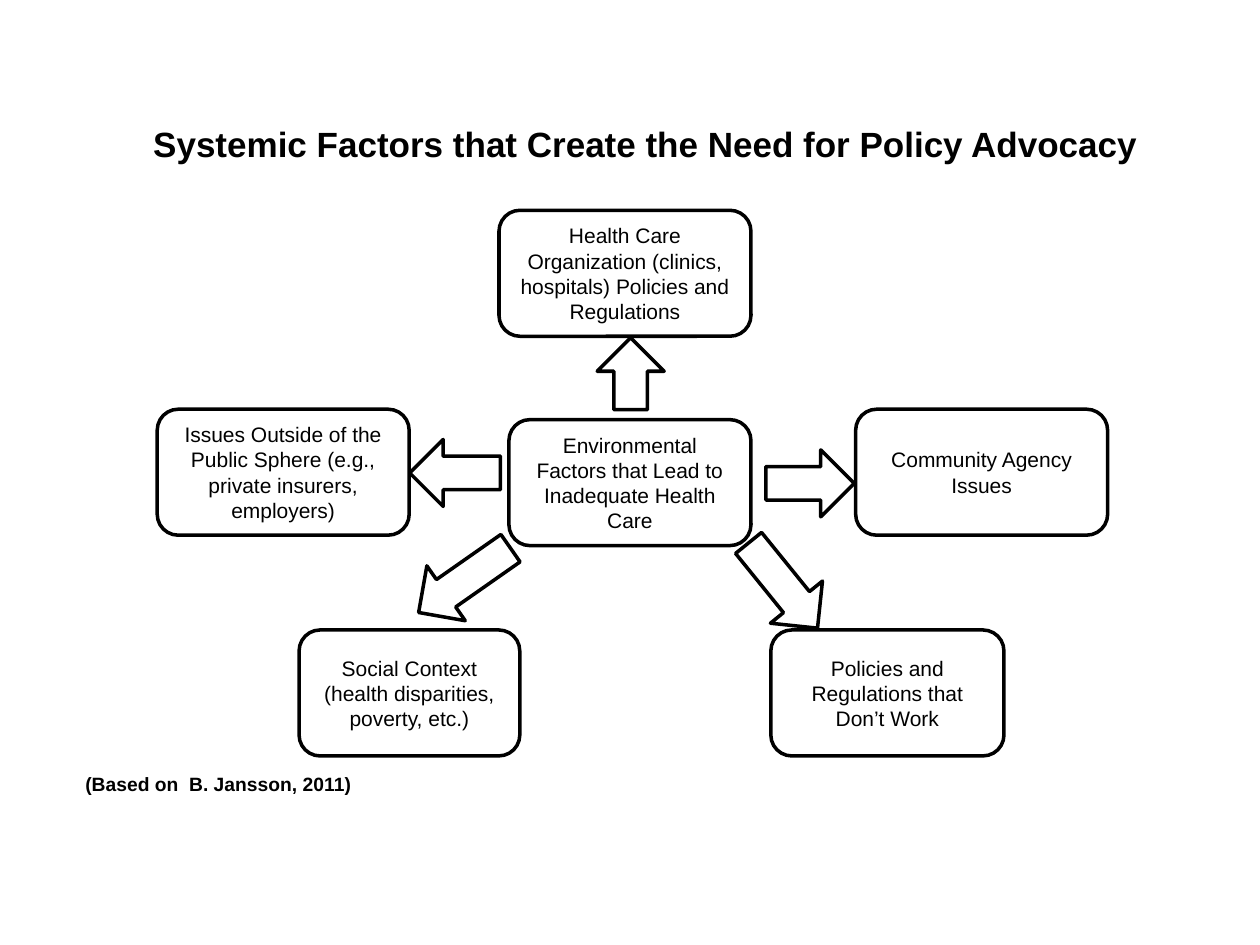
from pptx import Presentation
from pptx.dml.color import RGBColor
from pptx.enum.shapes import MSO_SHAPE
from pptx.enum.text import MSO_ANCHOR, PP_ALIGN
from pptx.util import Cm, Pt

COLORS = {"ink": "000000", "paper": "FFFFFF"}
FONT = "Arial"
BOX_HEIGHT = 2.54

BOXES = [
    ("Environmental Factors that Lead to Inadequate Health Care", 10.26, 8.46, 4.88),
    ("Health Care Organization (clinics, hospitals) Policies and Regulations",
     10.06, 4.24, 5.08),
    ("Community Agency Issues", 17.25, 8.25, 5.08),
    ("Issues Outside of the Public Sphere (e.g., private insurers, employers)",
     3.17, 8.25, 5.08),
    ("Social Context (health disparities, poverty, etc.)", 6.03, 12.7, 4.45),
    ("Policies and Regulations that Don’t Work", 15.54, 12.7, 4.7),
]

ARROWS = [
    (MSO_SHAPE.UP_ARROW, 12.04, 6.81, 1.35, 1.45, 0),
    (MSO_SHAPE.LEFT_ARROW, 8.26, 8.86, 1.83, 1.35, 0),
    (MSO_SHAPE.RIGHT_ARROW, 15.44, 9.07, 1.78, 1.35, 0),
    (MSO_SHAPE.DOWN_ARROW, 8.69, 10.57, 1.35, 2.26, 55),
    (MSO_SHAPE.RIGHT_ARROW, 14.68, 11.13, 2.21, 1.35, 51),
]


def color(name):
    return RGBColor.from_string(COLORS[name])


def write(tf, text, size, bold=False, align=PP_ALIGN.LEFT, anchor=MSO_ANCHOR.TOP):
    tf.word_wrap = True
    tf.vertical_anchor = anchor
    p = tf.paragraphs[0]
    p.text = text
    p.alignment = align
    p.font.name = FONT
    p.font.size = Pt(size)
    p.font.bold = bold
    p.font.color.rgb = color("ink")


def add_outlined(s, kind, left, top, width, height):
    sp = s.shapes.add_shape(kind, Cm(left), Cm(top), Cm(width), Cm(height))
    sp.shadow.inherit = False
    sp.line.color.rgb = color("ink")
    sp.line.width = Pt(2)
    return sp


def add_box(s, text, left, top, width):
    sp = add_outlined(s, MSO_SHAPE.ROUNDED_RECTANGLE, left, top, width, BOX_HEIGHT)
    sp.fill.solid()
    sp.fill.fore_color.rgb = color("paper")
    write(sp.text_frame, text, 12, align=PP_ALIGN.CENTER, anchor=MSO_ANCHOR.MIDDLE)


def add_arrow(s, kind, left, top, width, height, rotation):
    sp = add_outlined(s, kind, left, top, width, height)
    sp.fill.background()
    sp.rotation = rotation


def set_title(s, text):
    sp = s.shapes.title
    sp.left, sp.top, sp.width, sp.height = Cm(1.9), Cm(2.34), Cm(22.23), Cm(2.34)
    write(sp.text_frame, text, 20, bold=True, align=PP_ALIGN.CENTER)


def add_source(s, text):
    sp = s.shapes.add_textbox(Cm(1.47), Cm(15.44), Cm(8.26), Cm(1.75))
    write(sp.text_frame, text, 11, bold=True)


def main():
    prs = Presentation()
    prs.slide_width, prs.slide_height = Cm(25.4), Cm(19.05)
    s = prs.slides.add_slide(prs.slide_layouts[5])
    set_title(s, "Systemic Factors that Create the Need for Policy Advocacy")
    for box in BOXES:
        add_box(s, *box)
    for arrow in ARROWS:
        add_arrow(s, *arrow)
    add_source(s, "(Based on  B. Jansson, 2011)")
    prs.save("out.pptx")


if __name__ == "__main__":
    main()
